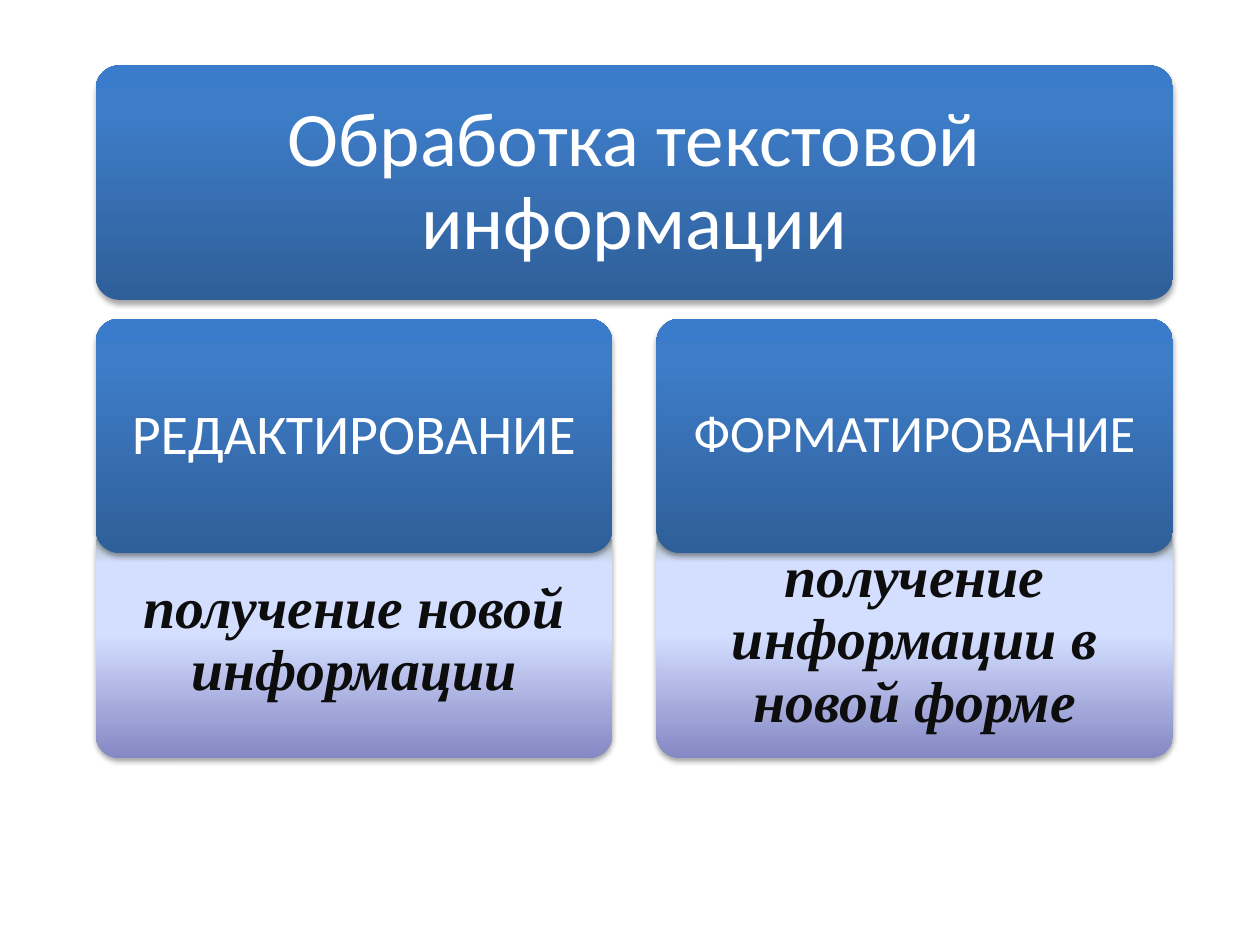
"""Builds a slide that splits text processing into editing and formatting."""
from dataclasses import dataclass

import pptx
import pptx.dml.color
import pptx.enum.shapes
import pptx.enum.text
import pptx.oxml
import pptx.oxml.ns
import pptx.slide
import pptx.util

COLORS = {
    "shadow": "000000",
    "white": "FFFFFF",
    "ink": "0D0D0D",
    "deep_blue": "2F5F99",
    "blue": "3D7CC7",
    "bright_blue": "3A7CCB",
    "violet": "8488C4",
    "pale": "D4DEFF",
    "sage": "96AB94",
}
LEFT, TOP = 0.76, 0.52
COLUMN_WIDTH, COLUMN_GAP = 4.1, 0.35
ROW_HEIGHT, ROW_GAP = 1.86, 0.15
OVERLAP_ROW = 1.81
CORNER = 0.1


@dataclass(frozen=True)
class Style:
    stops: tuple[tuple[int, str], ...]
    font: str
    color: str
    inset: float
    emphasis: bool


@dataclass(frozen=True)
class Card:
    text: str
    column: int
    row: float
    size: int
    style: Style
    span: int = 1


HEADING = Style(((0, "deep_blue"), (80, "blue"), (100, "bright_blue")),
                "Calibri", "white", 0.18, False)
MEANING = Style(((0, "violet"), (53, "pale"), (83, "pale"), (100, "sage")),
                "Times New Roman", "ink", 0.13, True)

CARDS = (
    Card("получение информации в новой форме", 1, OVERLAP_ROW, 33, MEANING),
    Card("получение новой информации", 0, OVERLAP_ROW, 33, MEANING),
    Card("Обработка текстовой информации", 0, 0, 44, HEADING, span=2),
    Card("РЕДАКТИРОВАНИЕ", 0, 1, 32, HEADING),
    Card("ФОРМАТИРОВАНИЕ", 1, 1, 30, HEADING),
)


def add_element(parent, xml: str) -> None:
    namespace = pptx.oxml.ns.nsdecls("a")
    parent.append(pptx.oxml.parse_xml(xml.replace(" ", f" {namespace} ", 1)))


def paint(shape, stops: tuple[tuple[int, str], ...]) -> None:
    shape.line.fill.background()
    shape.fill.gradient()
    shape.fill.gradient_angle = 90
    properties = shape._element.spPr
    stop_list = properties.find(".//" + pptx.oxml.ns.qn("a:gsLst"))
    for stop in list(stop_list):
        stop_list.remove(stop)
    for percent, color in stops:
        add_element(stop_list, f'<a:gs pos="{percent * 1000}">'
                               f'<a:srgbClr val="{COLORS[color]}"/></a:gs>')
    shape.shadow.inherit = False
    add_element(properties.find(pptx.oxml.ns.qn("a:effectLst")),
                '<a:outerShdw blurRad="40000" dist="23000" dir="5400000" rotWithShape="0">'
                f'<a:srgbClr val="{COLORS["shadow"]}"><a:alpha val="35000"/></a:srgbClr>'
                '</a:outerShdw>')


def write(shape, card: Card) -> None:
    frame = shape.text_frame
    frame.word_wrap = True
    frame.vertical_anchor = pptx.enum.text.MSO_ANCHOR.MIDDLE
    inset = pptx.util.Inches(card.style.inset)
    frame.margin_left = frame.margin_right = inset
    frame.margin_top = frame.margin_bottom = inset
    frame.text = card.text
    paragraph = frame.paragraphs[0]
    paragraph.alignment = pptx.enum.text.PP_ALIGN.CENTER
    paragraph.line_spacing = 0.9
    font = paragraph.runs[0].font
    font.name = card.style.font
    font.size = pptx.util.Pt(card.size)
    font.bold = font.italic = card.style.emphasis
    font.color.rgb = pptx.dml.color.RGBColor.from_string(COLORS[card.style.color])


def draw_card(slide: pptx.slide.Slide, card: Card) -> None:
    left = LEFT + card.column * (COLUMN_WIDTH + COLUMN_GAP)
    top = TOP + card.row * (ROW_HEIGHT + ROW_GAP)
    width = card.span * (COLUMN_WIDTH + COLUMN_GAP) - COLUMN_GAP
    shape = slide.shapes.add_shape(
        pptx.enum.shapes.MSO_SHAPE.ROUNDED_RECTANGLE,
        *map(pptx.util.Inches, (left, top, width, ROW_HEIGHT)))
    shape.adjustments[0] = CORNER
    paint(shape, card.style.stops)
    write(shape, card)


def main() -> None:
    deck = pptx.Presentation()
    deck.slide_width = pptx.util.Inches(10)
    deck.slide_height = pptx.util.Inches(7.5)
    slide = deck.slides.add_slide(deck.slide_layouts.get_by_name("Blank"))
    for card in CARDS:
        draw_card(slide, card)
    deck.save("out.pptx")


if __name__ == "__main__":
    main()
